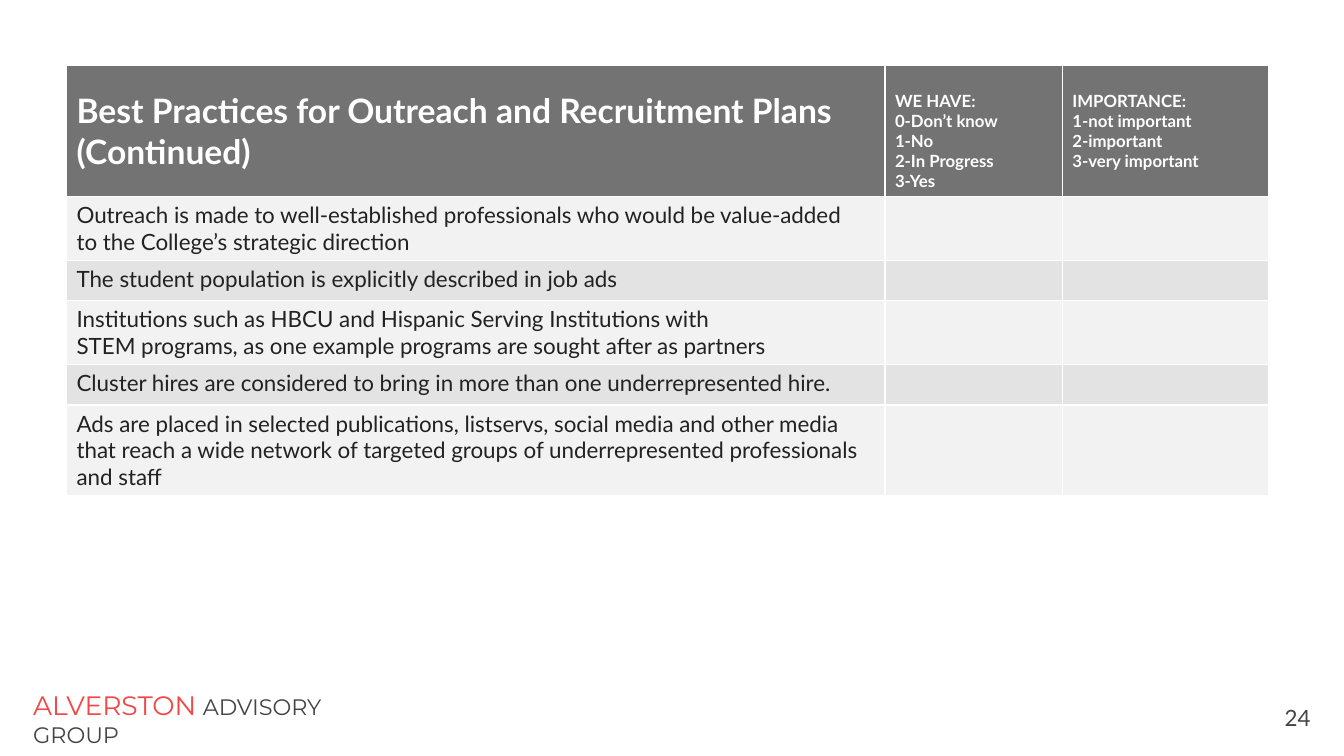
"""Build the outreach and recruitment checklist slide."""
from pptx import Presentation
from pptx.dml.color import RGBColor
from pptx.enum.text import PP_ALIGN as Align
from pptx.util import Pt

WHITE = RGBColor(0xFF, 0xFF, 0xFF)
HEADER_GRAY = RGBColor(0x73, 0x73, 0x73)
BANDS = (RGBColor(0xF2, 0xF2, 0xF2), RGBColor(0xE3, 0xE3, 0xE3))
INK = RGBColor(0x22, 0x22, 0x22)
FOOTER_GRAY = RGBColor(0x44, 0x44, 0x44)
RED = RGBColor(0xF4, 0x46, 0x47)
NBSP = chr(160)

HEADERS = [
    (["Best Practices for Outreach and Recruitment Plans (Continued)"], 24),
    (["WE HAVE:", "0-Don’t know", "1-No", "2-In Progress", "3-Yes"], 12),
    (["IMPORTANCE:", "1-not important", "2-important", "3-very important"], 12),
]
PRACTICES = [
    ("Outreach is made to well-established professionals who would be "
     f"value-added to{NBSP}the College’s strategic direction", 2),
    ("The student population is explicitly described in job ads", 1),
    ("Institutions such as HBCU and Hispanic Serving Institutions with "
     f"STEM{NBSP}programs, as one example programs are sought after as partners", 2),
    ("Cluster hires are considered to bring in more than one "
     "underrepresented hire.", 1),
    ("Ads are placed in selected publications, listservs, social media and "
     "other media that reach a wide network of targeted groups of "
     "underrepresented professionals and staff", 3),
]
BRAND = [
    ("ALVERSTON", 19, "Montserrat", RED),
    (" ", 18, "Lato", FOOTER_GRAY),
    ("ADVISORY GROUP", 16, "Montserrat", FOOTER_GRAY),
]
COLUMN_WIDTHS = (584.6, 126.7, 147.6)
TABLE_LEFT, TABLE_TOP = 47.5, 46.8
HEADER_HEIGHT, HEADER_INSET = 93.6, 18
LINE_HEIGHT, CELL_PADDING = 19.2, 7.2


def write(paragraph, text, size=16, font="Lato", color=INK, bold=False, align=None):
    """Add a formatted run to a paragraph."""
    if align is not None:
        paragraph.alignment = align
    run = paragraph.add_run()
    run.text = text
    run.font.size = Pt(size)
    run.font.name = font
    run.font.color.rgb = color
    run.font.bold = bold


def fill_cell(cell, color):
    """Give a cell a solid fill."""
    cell.fill.solid()
    cell.fill.fore_color.rgb = color


def add_checklist(slide):
    """Add the table of practices with its two rating columns."""
    heights = [HEADER_HEIGHT] + [
        lines * LINE_HEIGHT + CELL_PADDING for _, lines in PRACTICES]
    table = slide.shapes.add_table(
        len(heights), len(COLUMN_WIDTHS), Pt(TABLE_LEFT), Pt(TABLE_TOP),
        Pt(sum(COLUMN_WIDTHS)), Pt(sum(heights))).table
    for column, width in zip(table.columns, COLUMN_WIDTHS):
        column.width = Pt(width)
    for row, height in zip(table.rows, heights):
        row.height = Pt(height)

    for index, (lines, size) in enumerate(HEADERS):
        cell = table.cell(0, index)
        fill_cell(cell, HEADER_GRAY)
        cell.margin_top = Pt(HEADER_INSET)
        frame = cell.text_frame
        for number, line in enumerate(lines):
            paragraph = frame.add_paragraph() if number else frame.paragraphs[0]
            write(paragraph, line, size=size, color=WHITE, bold=True)

    for index, (practice, _) in enumerate(PRACTICES):
        cells = table.rows[index + 1].cells
        for cell in cells:
            fill_cell(cell, BANDS[index % 2])
        write(cells[0].text_frame.paragraphs[0], practice)


def add_text_box(slide, left, top, width, height):
    """Add a wrapping text box and return its first paragraph."""
    box = slide.shapes.add_textbox(Pt(left), Pt(top), Pt(width), Pt(height))
    box.text_frame.word_wrap = True
    return box.text_frame.paragraphs[0]


def main():
    """Create and save the presentation."""
    presentation = Presentation()
    presentation.slide_width, presentation.slide_height = Pt(960), Pt(540)
    slide = presentation.slides.add_slide(presentation.slide_layouts[6])
    number = add_text_box(slide, 867.6, 499.7, 75.6, 26.6)
    write(number, "24", color=FOOTER_GRAY, align=Align.RIGHT)
    brand = add_text_box(slide, 16.6, 488.9, 243.4, 36)
    for text, size, font, color in BRAND:
        write(brand, text, size=size, font=font, color=color)
    add_checklist(slide)
    presentation.save("out.pptx")


if __name__ == "__main__":
    main()
